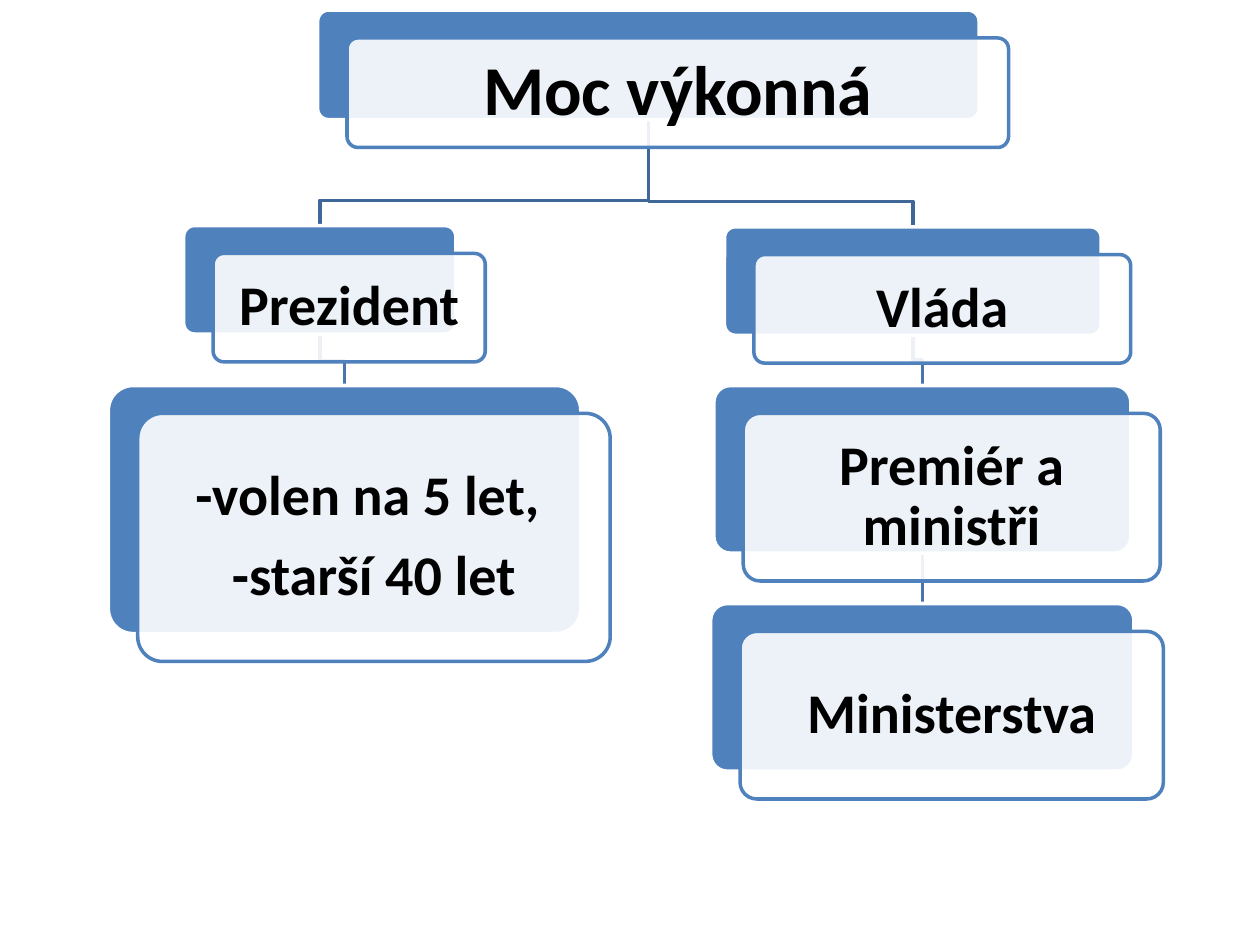
from dataclasses import dataclass
from lxml.etree import SubElement
from pptx import Presentation
from pptx.dml.color import RGBColor
from pptx.enum.shapes import MSO_CONNECTOR, MSO_SHAPE
from pptx.enum.text import MSO_ANCHOR, PP_ALIGN
from pptx.oxml.ns import qn
from pptx.util import Pt


@dataclass(frozen=True)
class Theme:
    blue: str = "4F81BD"
    white: str = "FFFFFF"
    black: str = "000000"
    upper: str = "3F6797"
    lower: str = "4875AC"
    font: str = "Calibri"
    head: int = 40
    body: int = 32
    line: int = 2


@dataclass(frozen=True)
class Box:
    left: float
    top: float
    width: float
    height: float
    lines: tuple
    size: int

    @property
    def mid(self):
        return self.left + self.width / 2

    @property
    def base(self):
        return self.top + self.height


THEME = Theme()
SHIFT = (16.8, 15.9)  # front card against back card
DROP = 14.4  # last leg of each link

BOXES = {
    "power": Box(181.5, 5.8, 378, 62.6, ("Moc výkonná",), THEME.head),
    "chief": Box(105, 128.9, 155.5, 62, ("Prezident ",), THEME.body),
    "terms": Box(61.9, 220.3, 270, 141.8,
                 ("-volen na 5 let, ", "-starší 40 let"), THEME.body),
    "board": Box(414, 129.6, 215.3, 62, ("Vláda",), THEME.body),
    "team": Box(407.9, 220.3, 238.3, 95.8, ("Premiér a ministři",), THEME.body),
    "desks": Box(406.1, 344.9, 241.9, 95.8, ("Ministerstva",), THEME.body),
}
LINKS = [
    ("team", "desks", THEME.lower),
    ("board", "team", THEME.lower),
    ("power", "board", THEME.upper),
    ("chief", "terms", THEME.lower),
    ("power", "chief", THEME.upper),
]


def apply(item, form):
    for name, value in form.items():
        setattr(item, name, value)


def stroke(shape, color):
    shape.line.color.rgb = RGBColor.from_string(color)
    shape.line.width = Pt(THEME.line)


def link(shapes, start, end, color):
    """Join the foot of one box to the top of the next."""
    if abs(start.mid - end.mid) < 1:
        wire = shapes.add_connector(MSO_CONNECTOR.STRAIGHT, Pt(start.mid),
                                    Pt(start.base), Pt(end.mid), Pt(end.top))
        SubElement(wire._element.spPr, qn("a:effectLst"))
        stroke(wire, color)
        return
    bend = end.top - DROP
    path = shapes.build_freeform(Pt(start.mid), Pt(start.base))
    turns = [(start.mid, bend), (end.mid, bend), (end.mid, end.top)]
    path.add_line_segments([(Pt(x), Pt(y)) for x, y in turns], close=False)
    wire = path.convert_to_shape()
    wire.fill.background()
    wire.shadow.inherit = False
    stroke(wire, color)


def card(shapes, box, fill, edge, shift=(0, 0)):
    shape = shapes.add_shape(MSO_SHAPE.ROUNDED_RECTANGLE,
                             Pt(box.left + shift[0]), Pt(box.top + shift[1]),
                             Pt(box.width), Pt(box.height))
    shape.adjustments[0] = 0.1
    shape.shadow.inherit = False
    shape.fill.solid()
    shape.fill.fore_color.rgb = RGBColor.from_string(fill)
    stroke(shape, edge)
    return shape


def fade(shape, share):
    color = shape._element.spPr.find(qn("a:solidFill")).find(qn("a:srgbClr"))
    SubElement(color, qn("a:alpha"), val=str(share * 1000))


def label(shape, box):
    frame = shape.text_frame
    inset = Pt(0.3 * box.size)
    apply(frame, {
        "word_wrap": True, "vertical_anchor": MSO_ANCHOR.MIDDLE,
        "margin_left": inset, "margin_right": inset,
        "margin_top": inset, "margin_bottom": inset,
    })
    for spot, line in enumerate(box.lines):
        para = frame.add_paragraph() if spot else frame.paragraphs[0]
        apply(para, {"alignment": PP_ALIGN.CENTER, "line_spacing": 0.9,
                     "space_after": Pt(0.35 * box.size)})
        run = para.add_run()
        run.text = line
        apply(run.font, {"name": THEME.font, "size": Pt(box.size), "bold": True})
        run.font.color.rgb = RGBColor.from_string(THEME.black)


def node(shapes, box):
    card(shapes, box, THEME.blue, THEME.white)
    front = card(shapes, box, THEME.white, THEME.blue, SHIFT)
    fade(front, 90)
    label(front, box)


def main():
    deck = Presentation()
    apply(deck, {"slide_width": Pt(720), "slide_height": Pt(540)})
    shapes = deck.slides.add_slide(deck.slide_layouts[6]).shapes

    # Links lie behind the cards
    for start, end, color in LINKS:
        link(shapes, BOXES[start], BOXES[end], color)

    # Cards with their text
    for box in BOXES.values():
        node(shapes, box)

    deck.save("out.pptx")


if __name__ == "__main__":
    main()
